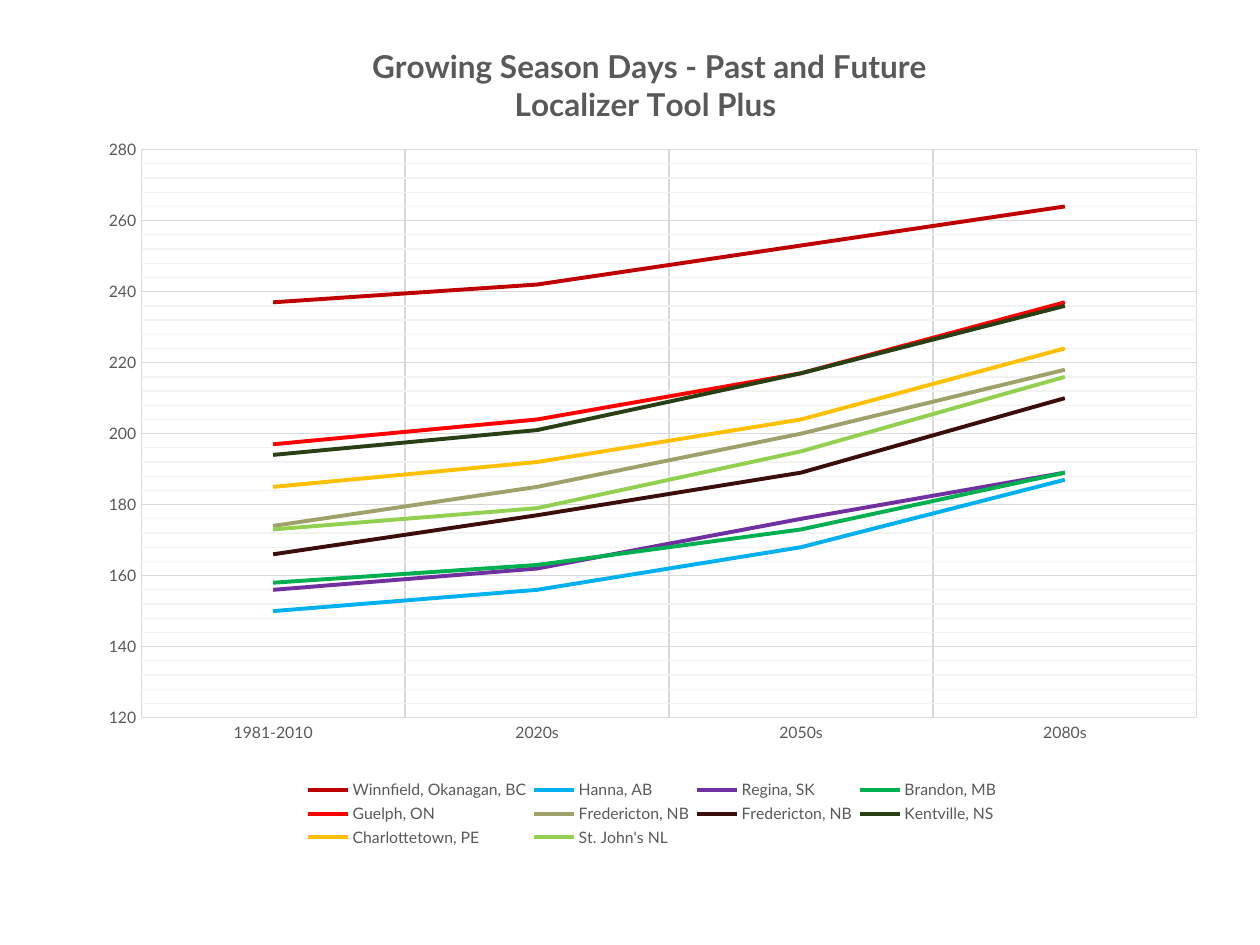
import pptx
import pptx.chart.data
import pptx.dml.color
import pptx.enum.chart
import pptx.oxml
import pptx.oxml.ns
import pptx.util

FONT = "Lato"
COLORS = {"text": "595959", "major": "D9D9D9", "minor": "F2F2F2"}
PERIODS = ["1981-2010", "2020s", "2050s", "2080s"]
TITLE_LINES = ["Growing Season Days - Past and Future", "Localizer Tool Plus "]
LOCATIONS = [
    ("Winnfield, Okanagan, BC", "C00000", (237, 242, 253, 264)),
    ("Hanna, AB", "00B0F0", (150, 156, 168, 187)),
    ("Regina, SK", "7030A0", (156, 162, 176, 189)),
    ("Brandon, MB", "00B050", (158, 163, 173, 189)),
    ("Guelph, ON", "FF0000", (197, 204, 217, 237)),
    ("Fredericton, NB", "A0A16A", (174, 185, 200, 218)),
    ("Fredericton, NB", "3B0E0C", (166, 177, 189, 210)),
    ("Kentville, NS", "284013", (194, 201, 217, 236)),
    ("Charlottetown, PE", "FFC000", (185, 192, 204, 224)),
    ("St. John's NL", "92D050", (173, 179, 195, 216)),
]


def rgb(value):
    return pptx.dml.color.RGBColor.from_string(value)


def format_font(font, size, bold=False):
    font.name = FONT
    font.size = pptx.util.Pt(size)
    font.bold = bold
    font.color.rgb = rgb(COLORS["text"])


def format_line(line, color, width):
    line.color.rgb = rgb(color)
    line.width = pptx.util.Pt(width)


def place_part(chart, tag, **shares):
    part = chart.element.xpath(f".//c:{tag}")[0]
    for old_layout in part.findall(pptx.oxml.ns.qn("c:layout")):
        part.remove(old_layout)
    target = '<c:layoutTarget val="inner"/>' if tag == "plotArea" else ""
    modes = '<c:xMode val="edge"/><c:yMode val="edge"/>'
    values = "".join(f'<c:{key} val="{share}"/>' for key, share in shares.items())
    layout = pptx.oxml.parse_xml(
        f'<c:layout {pptx.oxml.ns.nsdecls("c")}><c:manualLayout>'
        f"{target}{modes}{values}</c:manualLayout></c:layout>"
    )
    if tag == "plotArea":
        part.insert(0, layout)
    else:
        part.find(pptx.oxml.ns.qn("c:overlay")).addprevious(layout)


def add_line_chart(presentation, slide):
    data = pptx.chart.data.CategoryChartData(number_format="0")
    data.categories = PERIODS
    for name, color, days in LOCATIONS:
        data.add_series(name, days)
    width, height = presentation.slide_width, presentation.slide_height
    frame = slide.shapes.add_chart(
        pptx.enum.chart.XL_CHART_TYPE.LINE,
        round(width * 0.067), round(height * 0.017),
        round(width * 0.901), round(height * 0.884), data,
    )
    chart = frame.chart
    format_font(chart.font, 9)
    for series, (name, color, days) in zip(chart.plots[0].series, LOCATIONS):
        series.smooth = False
        series.marker.style = pptx.enum.chart.XL_MARKER_STYLE.NONE
        format_line(series.format.line, color, 2.25)
    return chart


def format_axis(axis):
    axis.major_tick_mark = pptx.enum.chart.XL_TICK_MARK.NONE
    axis.minor_tick_mark = pptx.enum.chart.XL_TICK_MARK.NONE
    axis.has_major_gridlines = True
    format_line(axis.major_gridlines.format.line, COLORS["major"], 0.75)
    format_font(axis.tick_labels.font, 9)


def format_minor_gridlines(chart):
    chart.value_axis.has_minor_gridlines = True
    gridlines = chart.element.xpath(".//c:valAx/c:minorGridlines")[0]
    gridlines.append(pptx.oxml.parse_xml(
        f'<c:spPr {pptx.oxml.ns.nsdecls("c", "a")}>'
        f'<a:ln w="{pptx.util.Pt(0.75)}"><a:solidFill>'
        f'<a:srgbClr val="{COLORS["minor"]}"/></a:solidFill></a:ln></c:spPr>'
    ))


def format_axes(chart):
    format_axis(chart.category_axis)
    format_line(chart.category_axis.format.line, COLORS["major"], 0.75)
    days_axis = chart.value_axis
    format_axis(days_axis)
    days_axis.minimum_scale, days_axis.maximum_scale = 120, 280
    days_axis.major_unit, days_axis.minor_unit = 20, 4
    days_axis.format.line.fill.background()
    format_minor_gridlines(chart)


def add_chart_title(chart):
    chart.has_title = True
    text_frame = chart.chart_title.text_frame
    for index, text in enumerate(TITLE_LINES):
        paragraph = text_frame.add_paragraph() if index else text_frame.paragraphs[0]
        run = paragraph.add_run()
        run.text = text
        format_font(run.font, 18, bold=True)


def add_legend(chart):
    chart.has_legend = True
    chart.legend.position = pptx.enum.chart.XL_LEGEND_POSITION.BOTTOM
    chart.legend.include_in_layout = False
    format_font(chart.legend.font, 9)


def main():
    presentation = pptx.Presentation()
    presentation.slide_width = pptx.util.Inches(10)
    presentation.slide_height = pptx.util.Inches(7.5)
    slide = presentation.slides.add_slide(presentation.slide_layouts[6])
    chart = add_line_chart(presentation, slide)
    format_axes(chart)
    add_chart_title(chart)
    add_legend(chart)
    place_part(chart, "title", x=0.25, y=0.03)
    place_part(chart, "plotArea", x=0.05, y=0.16, w=0.93, h=0.68)
    place_part(chart, "legend", x=0.19, y=0.91, w=0.62, h=0.09)
    presentation.save("out.pptx")


if __name__ == "__main__":
    main()
